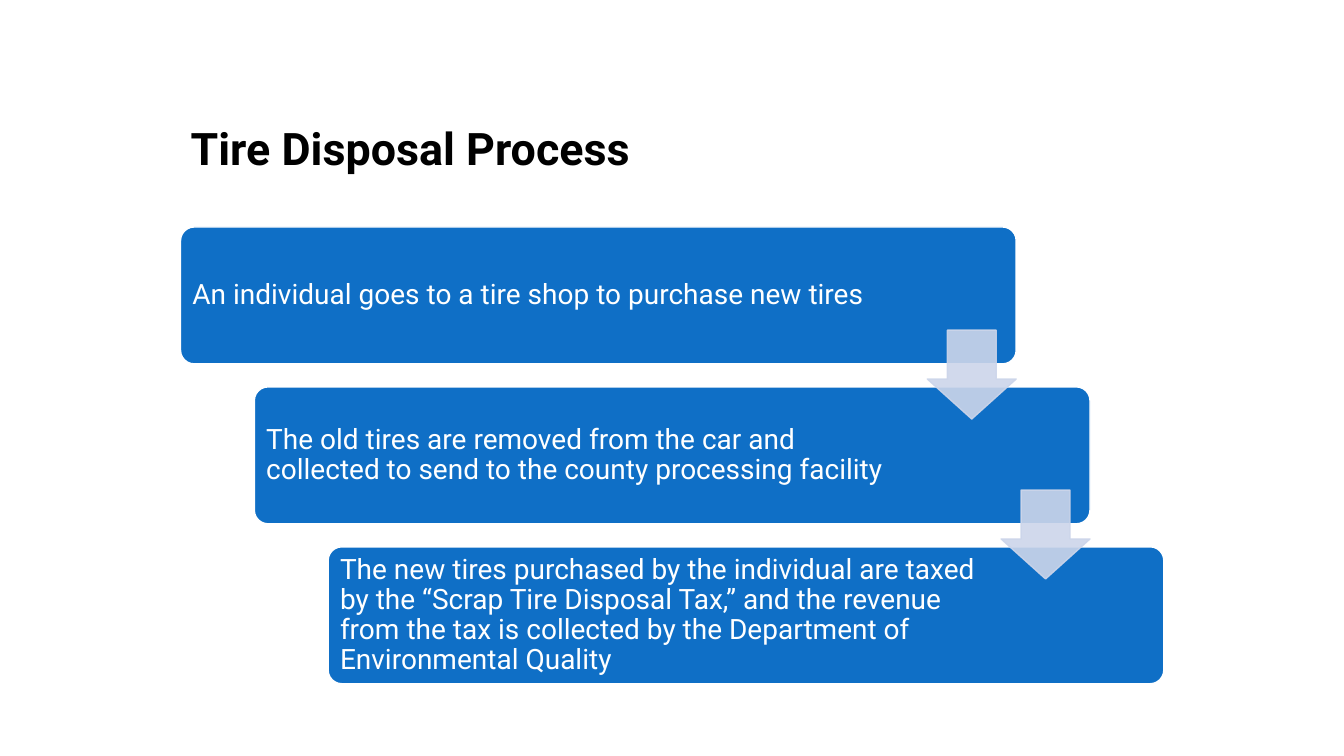
"""Build the tire disposal process slide: three stepped cards joined by arrows."""
from dataclasses import dataclass

from lxml import etree
from pptx import Presentation
from pptx.dml.color import RGBColor
from pptx.enum.shapes import MSO_SHAPE
from pptx.enum.text import MSO_ANCHOR, PP_ALIGN
from pptx.oxml.ns import qn
from pptx.util import Cm, Pt

CARD_SHAPE = MSO_SHAPE.ROUNDED_RECTANGLE
ARROW_SHAPE = MSO_SHAPE.DOWN_ARROW
MIDDLE = MSO_ANCHOR.MIDDLE
LEFT = PP_ALIGN.LEFT

FONT = "Roboto"
BLACK, WHITE, BLUE, PALE = "000000", "FFFFFF", "0F6FC6", "CCD5EA"
ARROW_ALPHA = 90

MARGIN, CARD_TOP = 4.55, 5.72
CARD_WIDTH, CARD_HEIGHT = 21.06, 3.45
STEP_X, STEP_Y = 1.86, 4.03
TEXT_OFFSET, TEXT_INSET = 0.1, 0.2
ARROW_LEFT, ARROW_TOP, ARROW_SIZE = 23.37, 8.32, 2.24


@dataclass(frozen=True)
class Step:
    text: str
    text_width: float


STEPS = (
    Step("An individual goes to a tire shop to purchase new tires", 17.32),
    Step("The old tires are removed from the car and collected to send to "
         "the county processing facility", 16.74),
    Step("The new tires purchased by the individual are taxed by the “Scrap Tire "
         "Disposal Tax,” and the revenue from the tax is collected by the "
         "Department of Environmental Quality", 16.74),
)


def paint(color_format, color: str) -> None:
    color_format.rgb = RGBColor.from_string(color)


def write(frame, text: str, size: float, color: str, bold: bool = False) -> None:
    frame.word_wrap = True
    frame.vertical_anchor = MIDDLE
    paragraph = frame.paragraphs[0]
    paragraph.alignment = LEFT
    paragraph.line_spacing = 0.9
    run = paragraph.add_run()
    run.text = text
    run.font.name = FONT
    run.font.size = Pt(size)
    run.font.bold = bold
    paint(run.font.color, color)


def add_block(slide, kind, box: tuple, adjustments: tuple, fill: str, line: str):
    block = slide.shapes.add_shape(kind, *map(Cm, box))
    block.shadow.inherit = False
    for index, value in enumerate(adjustments):
        block.adjustments[index] = value
    block.fill.solid()
    paint(block.fill.fore_color, fill)
    paint(block.line.color, line)
    block.line.width = Pt(1)
    return block


def add_card(slide, step: Step, index: int) -> None:
    left, top = MARGIN + index * STEP_X, CARD_TOP + index * STEP_Y
    add_block(slide, CARD_SHAPE, (left, top, CARD_WIDTH, CARD_HEIGHT), (0.1,), BLUE, WHITE)
    caption = slide.shapes.add_textbox(
        Cm(left + TEXT_OFFSET), Cm(top + TEXT_OFFSET),
        Cm(step.text_width), Cm(CARD_HEIGHT - 2 * TEXT_OFFSET))
    frame = caption.text_frame
    frame.margin_left = frame.margin_right = Cm(TEXT_INSET)
    frame.margin_top = frame.margin_bottom = Cm(TEXT_INSET)
    write(frame, step.text, 20, WHITE)


def add_arrow(slide, index: int) -> None:
    box = (ARROW_LEFT + index * STEP_X, ARROW_TOP + index * STEP_Y, ARROW_SIZE, ARROW_SIZE)
    arrow = add_block(slide, ARROW_SHAPE, box, (0.55, 0.45), PALE, PALE)
    properties = arrow.fill._xPr
    for color in properties.iter(qn("a:srgbClr")):
        etree.SubElement(color, qn("a:alpha"), val=str(ARROW_ALPHA * 1000))


def main() -> None:
    deck = Presentation()
    deck.slide_width, deck.slide_height = Cm(33.87), Cm(19.05)
    slide = deck.slides.add_slide(deck.slide_layouts[5])

    title = slide.shapes.title
    title.left, title.top, title.width, title.height = map(Cm, (MARGIN, 1.9, 24.77, 3.81))
    write(title.text_frame, "Tire Disposal Process", 32, BLACK, bold=True)

    for index, step in enumerate(STEPS):
        add_card(slide, step, index)
    for index in range(len(STEPS) - 1):
        add_arrow(slide, index)
    deck.save("out.pptx")


if __name__ == "__main__":
    main()
